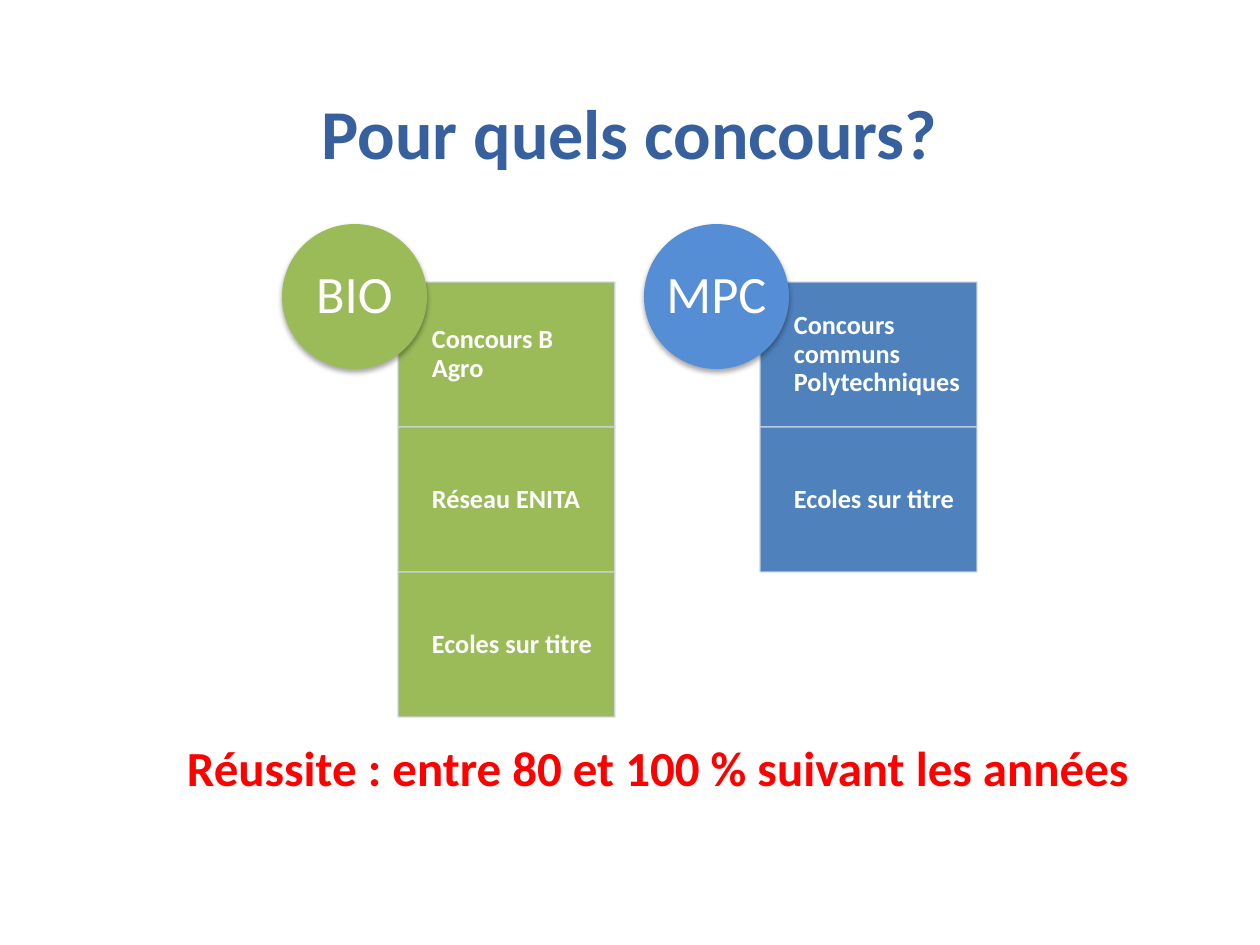
from lxml import etree
from pptx import Presentation
from pptx import util as u
from pptx.dml.color import RGBColor
from pptx.enum import shapes, text
from pptx.oxml.ns import qn

PX = u.Inches(1) / 126
FONT = "Calibri"
WHITE, BORDER = "FFFFFF", "D0D8E8"
CELL = 145  # side of a circle and height of a row
BRANCHES = [
    ("BIO", "9BBB59", "9BBB59", ["Concours B Agro", "Réseau ENITA", "Ecoles sur titre"]),
    ("MPC", "558ED5", "4F81BD", ["Concours communs Polytechniques", "Ecoles sur titre"]),
]


def px(*lengths):
    return [u.Emu(round(length * PX)) for length in lengths]


def paint(color_format, color):
    color_format.rgb = RGBColor.from_string(color)


def write(shape, words, color, insets=(13, 6, 13, 6), wrap=True,
          align=text.PP_ALIGN.CENTER, spacing=1.0, **font_format):
    frame = shape.text_frame
    left, top, right, bottom = px(*insets)
    frame_format = dict(margin_left=left, margin_top=top, margin_right=right,
                        margin_bottom=bottom, word_wrap=wrap,
                        vertical_anchor=text.MSO_ANCHOR.MIDDLE)
    for name, value in frame_format.items():
        setattr(frame, name, value)
    paragraph = frame.paragraphs[0]
    paragraph.alignment, paragraph.line_spacing = align, spacing
    run = paragraph.add_run()
    run.text = words
    run.font.name = FONT
    for name, value in font_format.items():
        setattr(run.font, name, value)
    paint(run.font.color, color)


def add_filled(slide, kind, box, color):
    shape = slide.shapes.add_shape(kind, *px(*box))
    shape.shadow.inherit = False
    shape.fill.solid()
    paint(shape.fill.fore_color, color)
    return shape


def add_alpha(color_element, percent):
    etree.SubElement(color_element, qn("a:alpha"), val=str(percent * 1000))


def drop_shadow(shape):
    effects = shape.element.spPr.find(qn("a:effectLst"))
    shadow = etree.SubElement(effects, qn("a:outerShdw"), blurRad=str(u.Pt(3.1)),
                              dist=str(u.Pt(1.8)), dir="5400000", rotWithShape="0")
    add_alpha(etree.SubElement(shadow, qn("a:srgbClr"), val="000000"), 35)


def add_exam(slide, box, exam, color):
    row = add_filled(slide, shapes.MSO_SHAPE.RECTANGLE, box, color)
    row.line.width = u.Pt(0.75)
    row.line.fill.solid()
    paint(row.line.color, BORDER)
    add_alpha(row.element.spPr.find(".//" + qn("a:ln")).find(".//" + qn("a:srgbClr")), 90)
    write(row, exam, WHITE, insets=(34, 15, 15, 15), align=text.PP_ALIGN.LEFT,
          spacing=0.9, size=u.Pt(15), bold=True)


def add_branch(slide, left, top, branch, circle_color, row_color, exams):
    """Stack the exams below and right of a circle that names the branch."""
    for index, exam in enumerate(exams):
        add_exam(slide, (left + 116, top + 58 + index * CELL, 217, CELL), exam, row_color)
    circle = add_filled(slide, shapes.MSO_SHAPE.OVAL, (left, top, CELL, CELL), circle_color)
    circle.line.fill.background()
    drop_shadow(circle)
    write(circle, branch, WHITE, insets=(0, 0, 0, 0), wrap=False, spacing=0.9, size=u.Pt(30))


def add_statement(slide, box, words, color, size, **layout):
    write(slide.shapes.add_textbox(*px(*box)), words, color,
          size=u.Pt(size), bold=True, **layout)


def main():
    deck = Presentation()
    deck.slide_width, deck.slide_height = px(1260, 945)
    slide = deck.slides.add_slide(deck.slide_layouts[6])
    add_statement(slide, (94, 53, 1071, 158), "Pour quels concours?", "36609E", 40)
    for index, branch in enumerate(BRANCHES):
        add_branch(slide, 282 + index * 362, 224, *branch)
    add_statement(slide, (174, 731, 970, 72),
                  "Réussite : entre 80 et 100 % suivant les années", "FF0000", 28,
                  wrap=False, align=text.PP_ALIGN.LEFT)
    deck.save("out.pptx")


if __name__ == "__main__":
    main()
